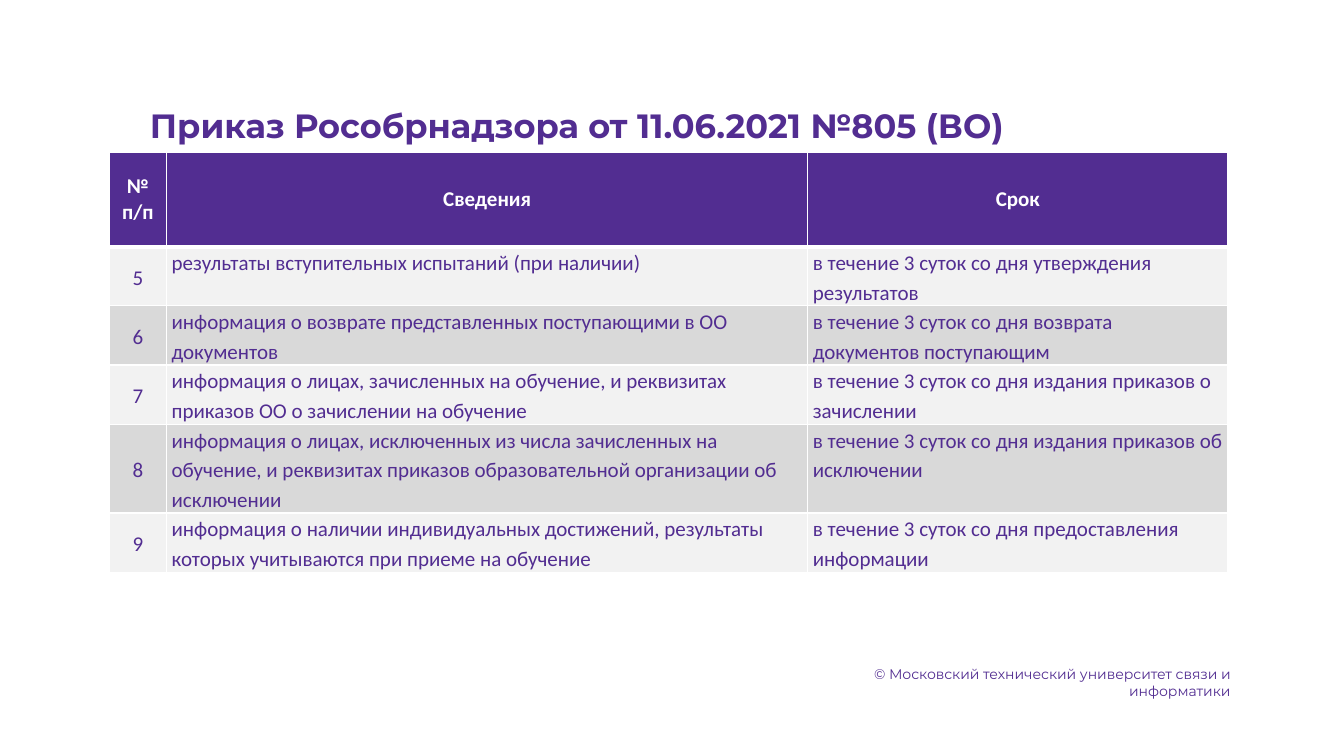
from dataclasses import dataclass

from lxml.etree import SubElement
from pptx import Presentation
from pptx.dml.color import RGBColor
from pptx.enum.text import MSO_ANCHOR as Anchor, MSO_AUTO_SIZE as AutoSize, PP_ALIGN as Align
from pptx.oxml.ns import qn
from pptx.util import Pt


@dataclass(frozen=True)
class Theme:
    purple: str = "522D91"
    white: str = "FFFFFF"
    light: str = "F2F2F2"
    dark: str = "D9D9D9"
    heading_font: str = "Montserrat"
    table_font: str = "Calibri"
    title_size: int = 24
    table_size: int = 15
    footer_size: int = 10


theme = Theme()


def format_text(text_frame, font_name, size, color, bold=False, align=Align.LEFT):
    for paragraph in text_frame.paragraphs:
        paragraph.alignment = align
        for run in paragraph.runs:
            run.font.name = font_name
            run.font.size = Pt(size)
            run.font.bold = bold
            run.font.color.rgb = RGBColor.from_string(color)


def add_borders(cell, widths):
    """Draw white cell borders; widths maps each side (L, R, T, B) to points."""
    properties = cell._tc.get_or_add_tcPr()
    for side, width in widths.items():
        line = SubElement(properties, qn(f"a:ln{side}"), w=str(Pt(width)))
        fill = SubElement(line, qn("a:solidFill"))
        SubElement(fill, qn("a:srgbClr"), val=theme.white)


presentation = Presentation()
presentation.slide_width = Pt(960)
presentation.slide_height = Pt(540)
slide = presentation.slides.add_slide(presentation.slide_layouts[6])

# Table
header = ("№ п/п", "Сведения", "Срок")
disclosures = [
    ("5", "результаты вступительных испытаний (при наличии)",
     "в течение 3 суток со дня утверждения результатов"),
    ("6", "информация о возврате представленных поступающими в ОО документов",
     "в течение 3 суток со дня возврата документов поступающим"),
    ("7", "информация о лицах, зачисленных на обучение, и реквизитах приказов ОО "
          "о зачислении на обучение",
     "в течение 3 суток со дня издания приказов о зачислении"),
    ("8", "информация о лицах, исключенных из числа зачисленных на обучение, "
          "и реквизитах приказов образовательной организации об исключении",
     "в течение 3 суток со дня издания приказов об исключении"),
    ("9", "информация о наличии индивидуальных достижений, результаты которых "
          "учитываются при приеме на обучение",
     "в течение 3 суток со дня предоставления информации"),
]
column_widths = (41, 458, 300)
row_heights = (67.5, 42, 42, 42, 63, 42)

table = slide.shapes.add_table(
    len(row_heights), len(column_widths), Pt(78), Pt(108.7),
    Pt(sum(column_widths)), Pt(sum(row_heights))).table
for column, width in zip(table.columns, column_widths):
    column.width = Pt(width)
for row, height in zip(table.rows, row_heights):
    row.height = Pt(height)

for row_index, texts in enumerate([header, *disclosures]):
    is_header = row_index == 0
    for column_index, text in enumerate(texts):
        cell = table.cell(row_index, column_index)
        centered = is_header or column_index == 0
        cell.text_frame.text = text
        cell.vertical_anchor = Anchor.MIDDLE if centered else Anchor.TOP
        cell.margin_left = cell.margin_right = Pt(0.7 if centered else 3.6)
        cell.margin_top = cell.margin_bottom = Pt(0.7 if centered else 0)
        format_text(cell.text_frame, theme.table_font, theme.table_size,
                    theme.white if is_header else theme.purple, is_header,
                    Align.CENTER if centered else Align.LEFT)
        if not is_header:
            cell.text_frame.paragraphs[0].line_spacing = 1.15
        add_borders(cell, {"L": 1, "R": 1, "T": 3 if row_index == 1 else 1,
                           "B": 3 if is_header else 1})
        band = theme.light if row_index % 2 else theme.dark
        cell.fill.solid()
        cell.fill.fore_color.rgb = RGBColor.from_string(theme.purple if is_header else band)

# Title and footer
title = slide.shapes.add_textbox(Pt(100), Pt(71.3), Pt(686), Pt(36))
title.text_frame.text = "Приказ Рособрнадзора от 11.06.2021 №805 (ВО)"
format_text(title.text_frame, theme.heading_font, theme.title_size, theme.purple, bold=True)

footer = slide.shapes.add_textbox(Pt(597), Pt(471.6), Pt(289), Pt(32))
footer.text_frame.text = "© Московский технический университет связи и информатики"
format_text(footer.text_frame, theme.heading_font, theme.footer_size, theme.purple,
            align=Align.RIGHT)

for text_box in (title, footer):
    text_box.text_frame.word_wrap = True
    text_box.text_frame.auto_size = AutoSize.SHAPE_TO_FIT_TEXT

presentation.save("out.pptx")
